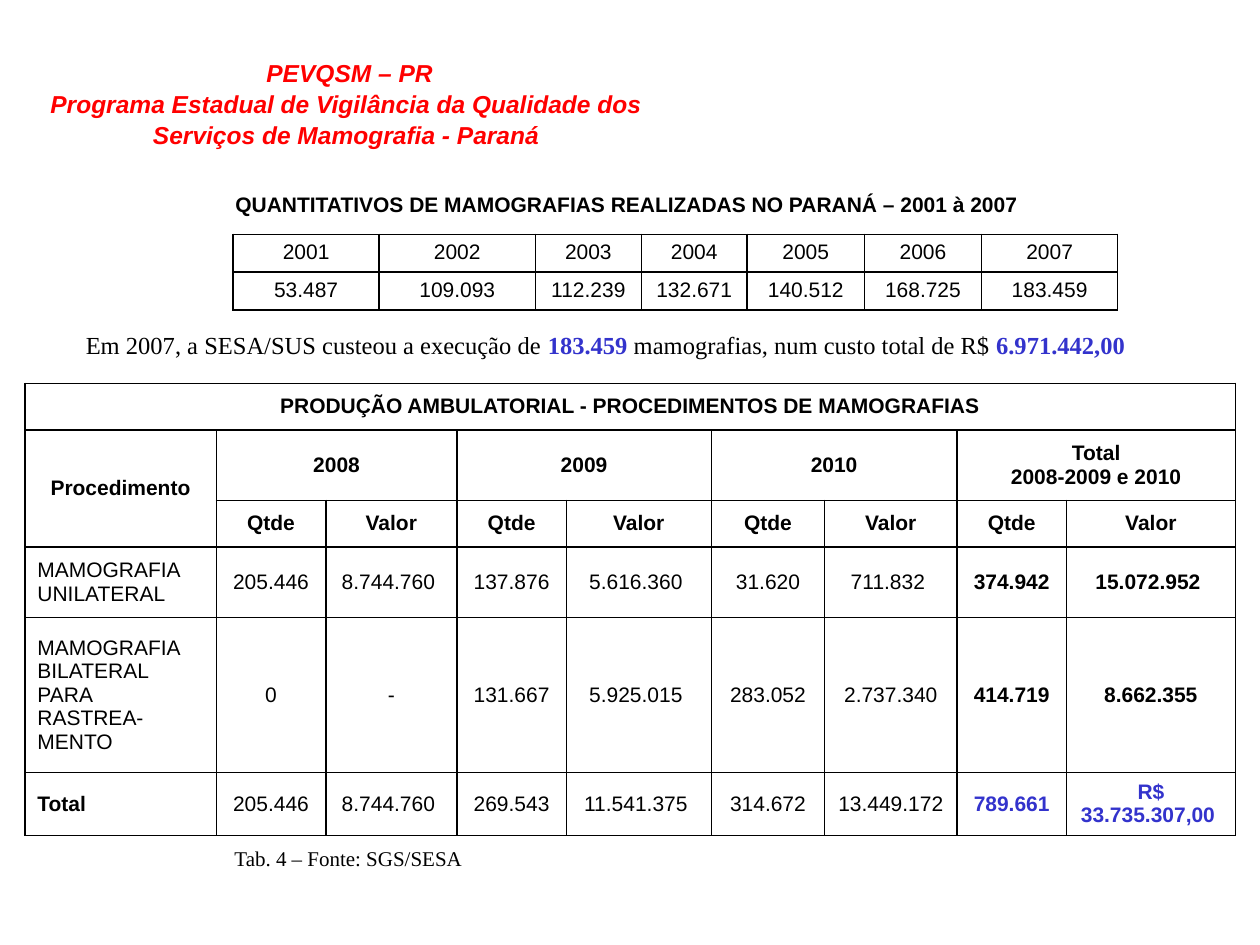
from lxml import etree
from pptx import Presentation
from pptx.dml.color import RGBColor
from pptx.enum.text import MSO_ANCHOR, MSO_AUTO_SIZE, PP_ALIGN
from pptx.oxml.ns import qn
from pptx.util import Pt

TOP, MIDDLE = MSO_ANCHOR.TOP, MSO_ANCHOR.MIDDLE
LEFT, CENTER = PP_ALIGN.LEFT, PP_ALIGN.CENTER
NO_AUTOFIT = MSO_AUTO_SIZE.NONE
BLACK, BLUE, RED = "000000", "3333CC", "FF0000"
SANS, SERIF = "Arial", "Times New Roman"

YEARLY = [
    ["2001", "2002", "2003", "2004", "2005", "2006", "2007"],
    ["53.487", "109.093", "112.239", "132.671", "140.512", "168.725", "183.459"],
]
YEARLY_COLS = [83.5, 89.3, 60.5, 60.5, 67, 67, 77.8]
YEARLY_ROWS = [21.6, 21.6]

PROCEDURES = [
    ["PRODUÇÃO AMBULATORIAL - PROCEDIMENTOS DE MAMOGRAFIAS"] + [""] * 8,
    ["Procedimento", "2008", "", "2009", "", "2010", "", "Total\n2008-2009 e 2010", ""],
    [""] + ["Qtde", " Valor "] * 4,
    ["MAMOGRAFIA UNILATERAL", "205.446", "8.744.760 ", "137.876", "5.616.360 ",
     "31.620", "711.832 ", "374.942", "15.072.952 "],
    ["MAMOGRAFIA BILATERAL PARA RASTREA-MENTO", "0", "-", "131.667", "5.925.015 ",
     "283.052", " 2.737.340 ", "414.719", " 8.662.355 "],
    ["Total", "205.446", "8.744.760 ", "269.543", "11.541.375 ",
     "314.672", "13.449.172 ", "789.661", "R$\n33.735.307,00 "],
]
PROCEDURE_COLS = [109.4, 62.6, 74.9, 62.6, 82.8, 64.8, 75.6, 62.6, 96.5]
PROCEDURE_ROWS = [26.6, 40.3, 26.6, 40.3, 88.6, 36]
HEADER_ROWS = 3
TOTAL_ROW = 5
TOTAL_COL = 7


def style(font, name, size, color=BLACK, bold=False, italic=False):
    font.name = name
    font.size = Pt(size)
    font.bold = bold
    font.italic = italic
    font.color.rgb = RGBColor.from_string(color)


def add_title(s, text, left, top, width, height):
    sp = s.shapes.title
    sp.left, sp.top, sp.width, sp.height = Pt(left), Pt(top), Pt(width), Pt(height)
    tf = sp.text_frame
    tf.text = text
    tf.auto_size = NO_AUTOFIT
    tf.vertical_anchor = MIDDLE
    p = tf.paragraphs[0]
    p.alignment = CENTER
    p.line_spacing = 1.05
    for r in p.runs:
        style(r.font, SANS, 14, RED, bold=True, italic=True)


def add_text(s, runs, left, top, width, height, name, size,
             inset=7.2, anchor=TOP, wrap=True):
    tf = s.shapes.add_textbox(Pt(left), Pt(top), Pt(width), Pt(height)).text_frame
    tf.word_wrap = wrap
    tf.vertical_anchor = anchor
    tf.margin_left = Pt(inset)
    tf.margin_bottom = Pt(0)
    p = tf.paragraphs[0]
    for text, color, bold in runs:
        r = p.add_run()
        r.text = text
        style(r.font, name, size, color, bold)


def set_borders(cell):
    tcPr = cell._tc.get_or_add_tcPr()
    for side in ("lnL", "lnR", "lnT", "lnB"):
        ln = etree.SubElement(tcPr, qn("a:" + side), w=str(Pt(1)))
        fill = etree.SubElement(ln, qn("a:solidFill"))
        etree.SubElement(fill, qn("a:srgbClr"), val=BLACK)


def fill_cell(cell, text, align=CENTER, anchor=TOP, color=BLACK, bold=False):
    set_borders(cell)
    cell.fill.background()
    cell.vertical_anchor = anchor
    cell.text_frame.text = text
    for p in cell.text_frame.paragraphs:
        p.alignment = align
        style(p.font, SANS, 12, color, bold)
        for r in p.runs:
            style(r.font, SANS, 12, color, bold)


def add_table(s, left, top, cols, rows):
    sp = s.shapes.add_table(len(rows), len(cols), Pt(left), Pt(top),
                            Pt(sum(cols)), Pt(sum(rows)))
    table = sp.table
    table.first_row = False
    table.horz_banding = False
    for column, width in zip(table.columns, cols):
        column.width = Pt(width)
    for row, height in zip(table.rows, rows):
        row.height = Pt(height)
    return table


def add_yearly_table(s):
    table = add_table(s, 133.2, 133.9, YEARLY_COLS, YEARLY_ROWS)
    for i, values in enumerate(YEARLY):
        for j, text in enumerate(values):
            fill_cell(table.cell(i, j), text)


def add_procedure_table(s):
    table = add_table(s, 14.2, 219, PROCEDURE_COLS, PROCEDURE_ROWS)
    for i, values in enumerate(PROCEDURES):
        for j, text in enumerate(values):
            header = i < HEADER_ROWS
            total = j >= TOTAL_COL
            fill_cell(
                table.cell(i, j), text,
                align=LEFT if j == 0 and not header else CENTER,
                anchor=MIDDLE,
                color=BLUE if i == TOTAL_ROW and total else BLACK,
                bold=header or total or (i == TOTAL_ROW and j == 0),
            )
    table.cell(0, 0).merge(table.cell(0, 8))
    table.cell(1, 0).merge(table.cell(2, 0))
    for j in range(1, 9, 2):
        table.cell(1, j).merge(table.cell(1, j + 1))


def main():
    prs = Presentation()
    prs.slide_width, prs.slide_height = Pt(720), Pt(540)
    s = prs.slides.add_slide(prs.slide_layouts[5])
    add_text(s, [("QUANTITATIVOS DE MAMOGRAFIAS REALIZADAS NO PARANÁ – 2001 à 2007",
                  BLACK, True)],
             127.4, 105.8, 464.4, 36, SANS, 12, wrap=False)
    add_yearly_table(s)
    add_text(s, [("Em 2007, a SESA/SUS custeou a execução de ", BLACK, False),
                 ("183.459", BLUE, True),
                 (" mamografias, num custo total de R$ ", BLACK, False),
                 ("6.971.442,00", BLUE, True)],
             31, 185, 658, 20.2, SERIF, 14, inset=18, anchor=MIDDLE)
    add_procedure_table(s)
    add_text(s, [("Tab. 4 – Fonte: SGS/SESA", BLACK, False)],
             116, 479.5, 272, 32.4, SERIF, 12, inset=18)
    add_title(s, "PEVQSM – PR\vPrograma Estadual de Vigilância da Qualidade dos \v"
                 "Serviços de Mamografia - Paraná ", 0, 26, 399.6, 65.5)
    prs.save("out.pptx")


if __name__ == "__main__":
    main()
